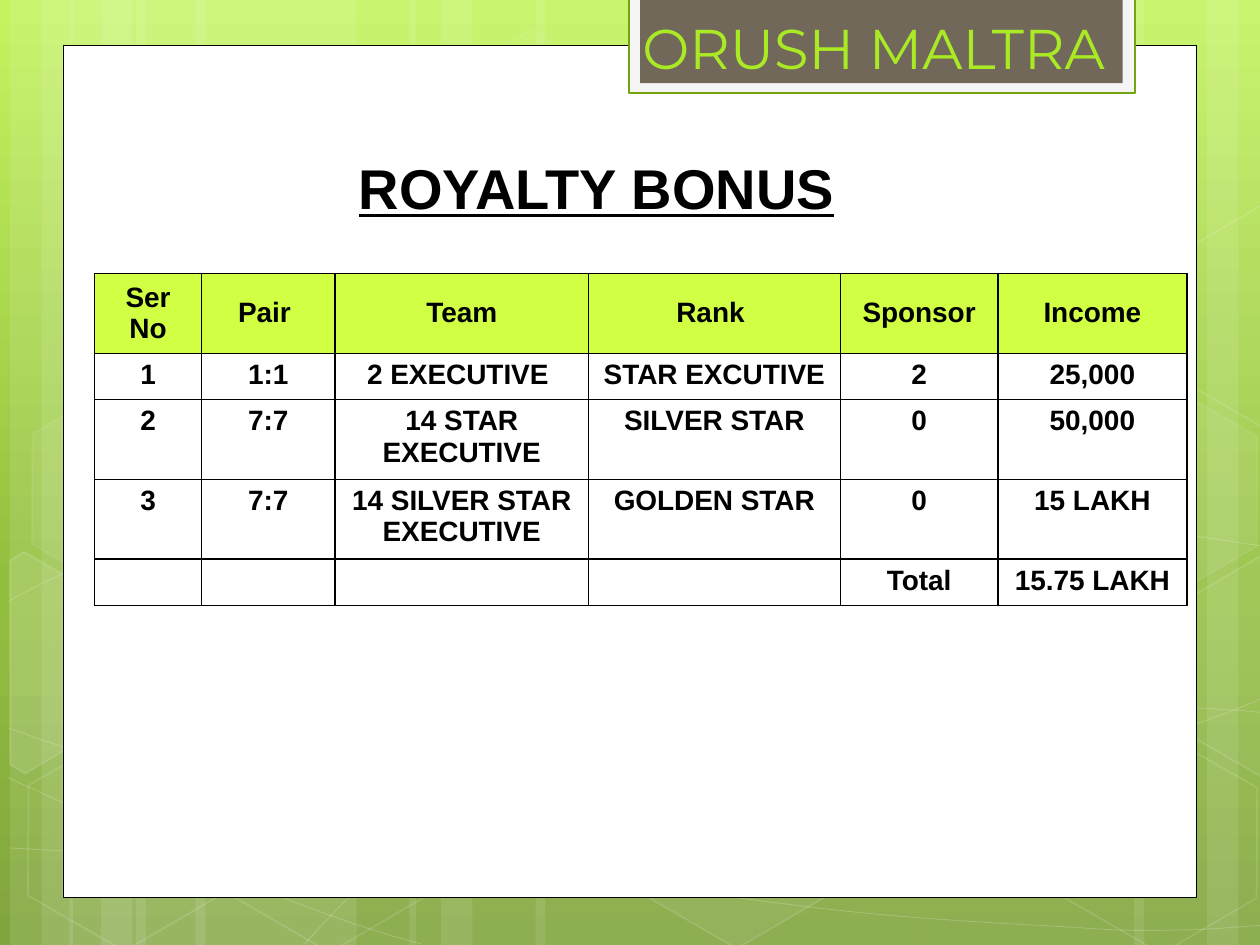
import lxml.etree
import pptx
import pptx.dml.color
import pptx.enum.shapes
import pptx.enum.text
import pptx.oxml.ns
import pptx.util

Inches = pptx.util.Inches
Pt = pptx.util.Pt
qn = pptx.oxml.ns.qn
RECTANGLE = pptx.enum.shapes.MSO_SHAPE.RECTANGLE
HEXAGON = pptx.enum.shapes.MSO_SHAPE.HEXAGON
MIDDLE = pptx.enum.text.MSO_ANCHOR.MIDDLE
CENTER = pptx.enum.text.PP_ALIGN.CENTER

COLORS = {
    "white": "FFFFFF", "black": "000000", "tab": "F5F5F5", "tab line": "74A510",
    "tab inner": "71685A", "brand": "AAEA25", "header": "D0FF44",
}
BACKGROUND_STOPS = [(0, "C3F35F"), (62, "93BF3F"), (100, "81A53E")]


def paint(shape, fill=None, fill_alpha=100, line=None, line_alpha=100, width=1):
    """Set fill and line by colour name; None leaves that part empty. Alphas are percentages."""
    shape.shadow.inherit = False
    for target, name, alpha in ((shape.fill, fill, fill_alpha), (shape.line.fill, line, line_alpha)):
        if name is None:
            target.background()
            continue
        target.solid()
        target.fore_color.rgb = pptx.dml.color.RGBColor.from_string(COLORS[name])
        if alpha < 100:
            parent = shape._element.spPr if target is shape.fill else shape.line._ln
            color = parent.find(qn("a:solidFill")).find(qn("a:srgbClr"))
            lxml.etree.SubElement(color, qn("a:alpha"), val=str(alpha * 1000))
    if line:
        shape.line.width = Pt(width)


def write(paragraph, text, color, **font_values):
    run = paragraph.add_run()
    run.text = text
    run.font.color.rgb = pptx.dml.color.RGBColor.from_string(COLORS[color])
    for name, value in font_values.items():
        setattr(run.font, name, value)


presentation = pptx.Presentation()
presentation.slide_width, presentation.slide_height = Inches(10), Inches(7.5)
slide = presentation.slides.add_slide(presentation.slide_layouts[6])
shapes = slide.shapes

# Background gradient, light at the top
background = slide.background.fill
background.gradient()
background.gradient_angle = 270
stop_list = next(slide._element.iter(qn("a:gsLst")))
for stop in list(stop_list):
    stop_list.remove(stop)
for position, color in BACKGROUND_STOPS:
    stop = lxml.etree.SubElement(stop_list, qn("a:gs"), pos=str(position * 1000))
    lxml.etree.SubElement(stop, qn("a:srgbClr"), val=color)

# Translucent vertical stripes: left, width
STRIPES = [
    (1.08, 1.75), (0.08, 0.5), (0.33, 0.83), (1.55, 1.75), (0.55, 0.5), (0.8, 0.83),
    (7.33, 1.75), (9.58, 0.5), (9, 0.83), (4.25, 3.08), (3.25, 0.5), (3.5, 0.83),
]
for left, width in STRIPES:
    stripe = shapes.add_shape(RECTANGLE, Inches(left), 0, Inches(width), Inches(7.5))
    paint(stripe, "white", 10)

# Thin curves: a start point, then two control points and an end point per cubic piece
CURVES = [
    [(0.07, 6.73), (0.61, 6.76), (1.15, 6.79), (1.9, 6.78), (2.65, 6.77), (3.58, 6.75), (4.58, 6.65),
     (5.58, 6.55), (7, 6.36), (7.92, 6.17), (8.83, 5.98), (9.77, 5.68), (10.07, 5.51)],
    [(0.07, 4.77), (0.36, 4.61), (0.65, 4.46), (1.21, 4.31), (1.78, 4.16), (2.59, 3.94), (3.47, 3.87),
     (4.36, 3.8), (5.44, 3.79), (6.54, 3.87), (7.64, 3.95), (9.47, 4.26), (10.07, 4.34)],
    [(0.06, 6.17), (1.27, 6.72), (2.47, 7.27), (3.34, 7.49)],
    [(0.07, 5.78), (0.38, 5.89), (0.7, 6), (1.28, 6.16), (1.86, 6.31), (2.73, 6.56), (3.57, 6.73),
     (4.4, 6.9), (5.45, 7.08), (6.28, 7.18), (7.11, 7.29), (8, 7.33), (8.53, 7.36),
     (9.05, 7.4), (9.19, 7.38), (9.45, 7.38), (9.71, 7.37), (9.89, 7.35), (10.07, 7.34)],
    [(2.42, 7.49), (2.6, 7.29), (2.78, 7.09), (3.02, 6.91), (3.26, 6.73), (3.6, 6.53), (3.88, 6.39),
     (4.16, 6.25), (4.33, 6.19), (4.7, 6.09), (5.06, 5.99), (5.73, 5.85), (6.08, 5.78),
     (6.44, 5.71), (6.49, 5.71), (6.8, 5.69), (7.11, 5.66), (7.6, 5.63), (7.94, 5.62),
     (8.29, 5.61), (8.86, 5.62), (8.86, 5.62), (9.08, 5.62), (9.31, 5.62), (9.53, 5.62),
     (9.71, 5.63), (9.88, 5.64), (9.97, 5.65), (10.06, 5.66), (10.03, 5.65), (10.06, 5.66)],
]
for curve in CURVES:
    points = [(Inches(x), Inches(y)) for x, y in curve]
    builder = shapes.build_freeform(*points[0])
    builder.add_line_segments(points[1:], close=False)
    shape = builder.convert_to_shape()
    # Every three straight segments become one cubic piece
    segments = list(shape._element.iter(qn("a:lnTo")))
    outline = segments[0].getparent()
    for first in range(0, len(segments), 3):
        cubic = lxml.etree.SubElement(outline, qn("a:cubicBezTo"))
        for segment in segments[first:first + 3]:
            cubic.append(segment[0])
            outline.remove(segment)
    paint(shape, line="white", line_alpha=20, width=0.5)

# Honeycomb: left, top, fill alpha (None for no fill), line alpha
HEXAGONS = [
    (3.34, 0.36, 4, 8), (4.97, 5.89, 6, 12), (0.11, 5.91, None, 12), (0.14, 3.12, 7, 8),
    (1.74, 5.92, None, 12), (7.53, 4.53, 10, 12), (8.34, 5.93, None, 12), (8.34, 3.14, 7, 8),
]
for left, top, fill_alpha, line_alpha in HEXAGONS:
    hexagon = shapes.add_shape(HEXAGON, Inches(left), Inches(top), Inches(1.75), Inches(1.52))
    hexagon.rotation = 30
    hexagon.adjustments[0] = 0.285
    paint(hexagon, "white" if fill_alpha else None, fill_alpha, "white", line_alpha)

# Hexagons cut off by the slide edges: corners, fill alpha
CUT_HEXAGONS = [
    ([(0.08, 4.45), (0.19, 4.38), (0.96, 4.82), (0.95, 5.7), (0.2, 6.14), (0.08, 6.07)], 10),
    ([(9.26, 4.85), (10.01, 4.41), (10.09, 4.46), (10.09, 6.13), (10.02, 6.17), (9.26, 5.73)], 4),
    ([(9.26, 2.07), (10.01, 1.63), (10.1, 1.68), (10.09, 3.35), (10.02, 3.39), (9.26, 2.95)], None),
]
for corners, fill_alpha in CUT_HEXAGONS:
    points = [(Inches(x), Inches(y)) for x, y in corners]
    builder = shapes.build_freeform(*points[0])
    builder.add_line_segments(points[1:], close=True)
    paint(builder.convert_to_shape(), "white" if fill_alpha else None, fill_alpha, "white", 12)

# White page and the name tab hanging from the top
PANELS = [
    ((0.5, 0.36, 9, 6.76), {"fill": "white", "line": "black", "width": 0.5}),
    ((4.99, -0.02, 4.02, 0.76), {"fill": "tab", "line": "tab line", "width": 1.25}),
    ((5.08, -0.02, 3.83, 0.68), {"fill": "tab inner"}),
]
for box, style in PANELS:
    paint(shapes.add_shape(RECTANGLE, *map(Inches, box)), **style)

brand = shapes.add_textbox(Inches(5), Inches(-0.24), Inches(6), Inches(1.23)).text_frame
brand.word_wrap = True
brand.vertical_anchor = MIDDLE
write(brand.paragraphs[0], "ORUSH MALTRA", "brand", name="Montserrat", size=Pt(32))

# Bonus table; rows grow to fit their text
ROWS = [
    ["Ser No", "Pair ", "Team", "Rank ", "Sponsor", "Income"],
    ["1", "1:1", "2 EXECUTIVE ", "STAR EXCUTIVE", "2", "25,000"],
    ["2", "7:7", "14 STAR EXECUTIVE", "SILVER STAR", "0", "50,000"],
    ["3", "7:7", "14 SILVER STAR EXECUTIVE", "GOLDEN STAR", "0", "15 LAKH"],
    ["", "", "", "", "Total", "15.75 LAKH"],
]
COLUMN_WIDTHS = [0.85, 1.06, 2.01, 2, 1.25, 1.5]
ROW_HEIGHTS = [0.38, 0.32, 0.32, 0.32, 0.32]
table_frame = shapes.add_table(len(ROWS), len(COLUMN_WIDTHS), Inches(0.75), Inches(2.17),
                               Inches(sum(COLUMN_WIDTHS)), Inches(sum(ROW_HEIGHTS)))
table = table_frame.table
for column, width in zip(table.columns, COLUMN_WIDTHS):
    column.width = Inches(width)
for row_index, (texts, height) in enumerate(zip(ROWS, ROW_HEIGHTS)):
    table.rows[row_index].height = Inches(height)
    for column_index, text in enumerate(texts):
        cell = table.cell(row_index, column_index)
        properties = cell._tc.get_or_add_tcPr()
        for side in ("lnL", "lnR", "lnT", "lnB"):
            border = lxml.etree.SubElement(properties, qn("a:" + side), w=str(Pt(1)))
            border_fill = lxml.etree.SubElement(border, qn("a:solidFill"))
            lxml.etree.SubElement(border_fill, qn("a:srgbClr"), val=COLORS["black"])
        if row_index == 0:
            cell.vertical_anchor = MIDDLE
            cell.fill.solid()
            cell.fill.fore_color.rgb = pptx.dml.color.RGBColor.from_string(COLORS["header"])
        else:
            cell.fill.background()
        paragraph = cell.text_frame.paragraphs[0]
        paragraph.alignment = CENTER
        if text:
            write(paragraph, text, "black", name="Arial", size=Pt(16), bold=True)
        else:
            end_format = lxml.etree.SubElement(paragraph._p, qn("a:endParaRPr"), sz="1600")
            lxml.etree.SubElement(end_format, qn("a:latin"), typeface="Arial")
table_frame.height = Inches(2.63)

title = shapes.add_textbox(Inches(2.75), Inches(1.17), Inches(4.5), Inches(0.64)).text_frame
title.word_wrap = True
write(title.paragraphs[0], "ROYALTY BONUS", "black", name="Arial", size=Pt(32), bold=True, underline=True)

presentation.save("out.pptx")
